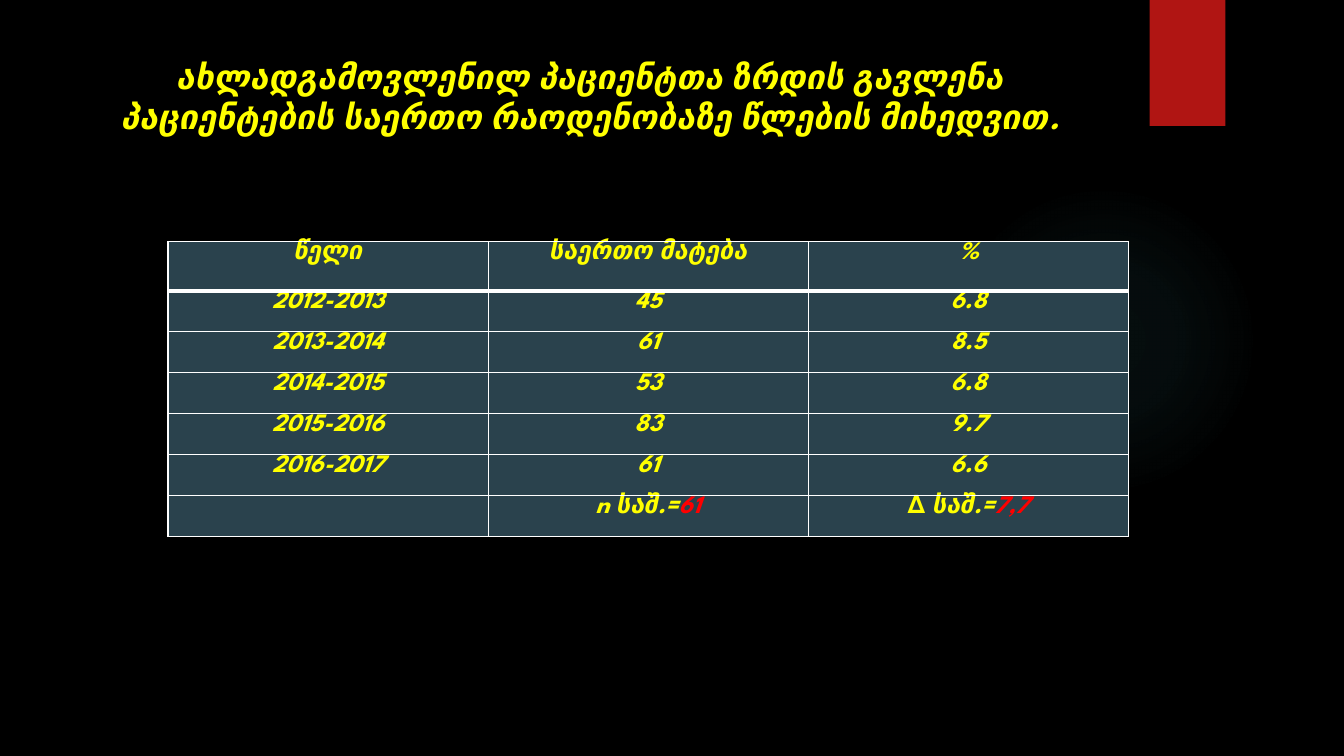
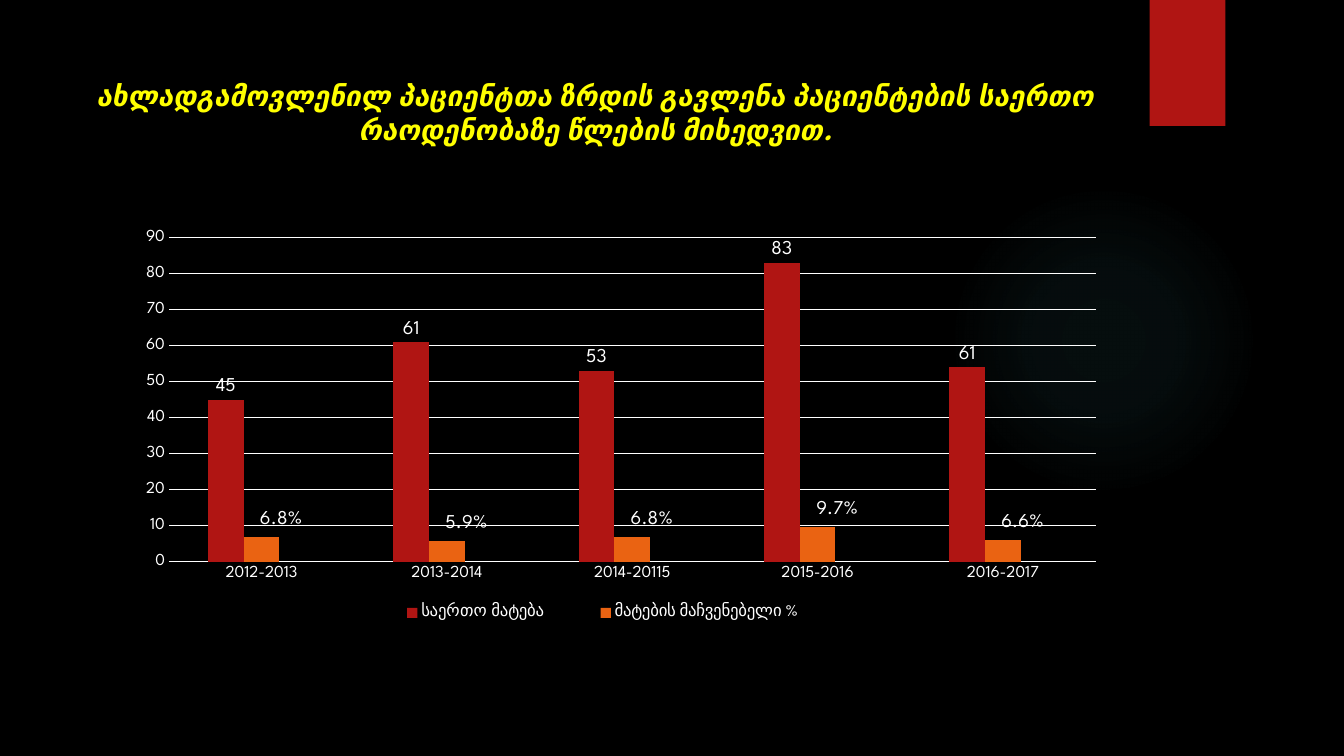
from pptx import Presentation
from pptx.chart.data import CategoryChartData
from pptx.dml.color import RGBColor
from pptx.enum.chart import XL_CHART_TYPE, XL_LABEL_POSITION, XL_LEGEND_POSITION, XL_TICK_MARK
from pptx.enum.shapes import MSO_SHAPE
from pptx.enum.text import MSO_ANCHOR, MSO_AUTO_SIZE, PP_ALIGN
from pptx.oxml import parse_xml
from pptx.oxml.ns import nsdecls, qn
from pptx.util import Emu, Pt

BLACK = RGBColor(0x00, 0x00, 0x00)
WHITE = RGBColor(0xFF, 0xFF, 0xFF)
YELLOW = RGBColor(0xFF, 0xFF, 0x00)
RED = RGBColor(0xFF, 0x00, 0x00)
BRICK = RGBColor(0xB0, 0x15, 0x13)
ORANGE = RGBColor(0xEA, 0x63, 0x12)
GOLD = RGBColor(0xE6, 0xB7, 0x29)
SLATE = RGBColor(0x2A, 0x42, 0x4D)
TEAL = RGBColor(0x50, 0xB9, 0xC1)
FACE = "League Spartan"
SCALE = 9525

HEAD = "ახლადგამოვლენილ პაციენტთა ზრდის გავლენა პაციენტების საერთო რაოდენობაზე წლების მიხედვით."
ROWS = [
    ["წელი", "საერთო მატება", "%"],
    ["2012-2013", "45", "6.8"],
    ["2013-2014", "61", "8.5"],
    ["2014-2015", "53", "6.8"],
    ["2015-2016", "83", "9.7"],
    ["2016-2017", "61", "6.6"],
    ["", "n საშ.=|61", "∆ საშ.=|7,7"],
]
YEARS = ["2012-2013", "2013-2014", "2014-20115", "2015-2016", "2016-2017"]
SERIES = [
    ("საერთო მატება", [45, 61, 53, 83, 54], BRICK, {4: "61"}, None),
    ("მატების მაჩვენებელი %", [6.8, 5.8, 6.8, 9.7, 6], ORANGE,
     dict(enumerate(["6.8%", "5.9%", "6.8%", "9.7%", "6.6%"])), (0.02, -0.01)),
    ("Series 3", [None] * 5, GOLD, {}, None),
]


def px(*sizes):
    """Turn pixel lengths into EMU."""
    return [Emu(size * SCALE) for size in sizes]


def place(x, y, w=None, h=None, inner=False):
    """Build a manual chart layout from fractions."""
    tags = '<c:layoutTarget val="inner"/>' if inner else ""
    if w:
        tags += '<c:xMode val="edge"/><c:yMode val="edge"/>'
    for tag, part in zip("xywh", (x, y, w, h)):
        tags += f'<c:{tag} val="{part}"/>' if part is not None else ""
    return parse_xml(f'<c:layout {nsdecls("c")}><c:manualLayout>{tags}</c:manualLayout></c:layout>')


class Deck:
    """Holds the style and the current slide."""

    def __init__(self):
        """Start a black wide deck."""
        self.file = Presentation()
        self.file.slide_width, self.file.slide_height = px(1280, 720)
        fill = self.file.slide_master.background.fill
        fill.solid()
        fill.fore_color.rgb = BLACK

    def font(self, font, size, color, strong=False):
        """Style one font."""
        font.name, font.size = FACE, Pt(size)
        font.color.rgb = color
        font.bold = font.italic = strong

    def runs(self, para, text, size, tints=(YELLOW, RED)):
        """Add centred runs, split at bars, one tint each."""
        para.alignment = PP_ALIGN.CENTER
        for part, tint in zip(text.split("|"), tints):
            if part:
                run = para.add_run()
                run.text = part
                self.font(run.font, size, tint, True)

    def slide(self, text, size, *box):
        """Add a slide with its glow, ribbon and title."""
        self.page = self.file.slides.add_slide(self.file.slide_layouts[5])
        self.glow(903, 176, 296, 296)
        self.block(MSO_SHAPE.RECTANGLE, BRICK, 1095, 0, 72, 120)
        title = self.page.shapes.title
        title.left, title.top, title.width, title.height = px(*box)
        frame = title.text_frame
        frame.auto_size, frame.word_wrap = MSO_AUTO_SIZE.NONE, True
        frame.vertical_anchor = MSO_ANCHOR.TOP
        self.runs(frame.paragraphs[0], text, size)

    def block(self, kind, color, *box):
        """Add a plain filled shape."""
        shape = self.page.shapes.add_shape(kind, *px(*box))
        shape.shadow.inherit = False
        shape.fill.solid()
        shape.fill.fore_color.rgb = color
        shape.line.fill.background()
        return shape

    def glow(self, *box):
        """Add a circle that fades outwards."""
        props = self.block(MSO_SHAPE.OVAL, TEAL, *box)._element.spPr
        stops = "".join(
            f'<a:gs pos="{pos}000"><a:srgbClr val="{TEAL}"><a:alpha val="{alpha}000"/></a:srgbClr></a:gs>'
            for pos, alpha in ((0, 7), (36, 6), (69, 0)))
        fade = parse_xml(
            f'<a:gradFill {nsdecls("a")}><a:gsLst>{stops}</a:gsLst><a:path path="circle">'
            '<a:fillToRect l="50000" t="50000" r="50000" b="50000"/></a:path></a:gradFill>')
        props.replace(props.find(qn("a:solidFill")), fade)

    def edge(self, cell, top, base):
        """Draw white borders round a cell."""
        props = cell._tc.get_or_add_tcPr()
        for spot, (side, width) in enumerate(zip("LRTB", (1, 1, top, base))):
            props.insert(spot, parse_xml(
                f'<a:ln{side} {nsdecls("a")} w="{Pt(width)}"><a:solidFill>'
                f'<a:srgbClr val="{WHITE}"/></a:solidFill></a:ln{side}>'))

    def table(self, rows, heights, *box):
        """Add a table with a thick rule under its head."""
        grid = self.page.shapes.add_table(len(rows), len(rows[0]), *px(*box)).table
        grid.first_row = grid.horz_banding = False
        for r, (row, height) in enumerate(zip(rows, heights)):
            grid.rows[r].height = px(height)[0]
            for c, text in enumerate(row):
                cell = grid.cell(r, c)
                cell.margin_top = cell.margin_bottom = 0
                cell.fill.solid()
                cell.fill.fore_color.rgb = SLATE
                self.edge(cell, 3 if r == 1 else 1, 3 if r == 0 else 1)
                self.runs(cell.text_frame.paragraphs[0], text, 18)

    def axis(self, axis, line):
        """Style one chart axis and its line."""
        axis.major_tick_mark = axis.minor_tick_mark = XL_TICK_MARK.NONE
        self.font(axis.tick_labels.font, 12, WHITE)
        line.color.rgb = WHITE
        line.width = Pt(0.75)

    def label(self, bars, notes, shift):
        """Label a series, with own texts at some points."""
        labels = bars.data_labels
        labels.show_value = True
        labels.position = XL_LABEL_POSITION.OUTSIDE_END
        self.font(labels.font, 14, WHITE)
        for spot, text in notes.items():
            note = bars.points[spot].data_label
            run = note.text_frame.paragraphs[0].add_run()
            run.text = text
            self.font(run.font, 14, WHITE)
            note.position = XL_LABEL_POSITION.OUTSIDE_END
        if shift:
            for item in bars._element.iter(qn("c:dLbl")):
                item.insert(1, place(*shift))

    def chart(self, names, series, *box):
        """Add a column chart with a legend below."""
        data = CategoryChartData()
        data.categories = names
        for name, values, *_ in series:
            data.add_series(name, values)
        chart = self.page.shapes.add_chart(XL_CHART_TYPE.COLUMN_CLUSTERED, *px(*box), data).chart
        chart.has_title = False
        self.font(chart.font, 10, WHITE)
        plot = chart.plots[0]
        plot.gap_width, plot.vary_by_categories = 219, False
        for bars, (_, _, color, notes, shift) in zip(plot.series, series):
            bars.format.fill.solid()
            bars.format.fill.fore_color.rgb = color
            self.label(bars, notes, shift)
        scale = chart.value_axis
        scale.minimum_scale, scale.maximum_scale, scale.major_unit = 0, 90, 10
        self.axis(chart.category_axis, chart.category_axis.format.line)
        self.axis(scale, scale.major_gridlines.format.line)
        scale.format.line.fill.background()
        area = chart._chartSpace.chart.plotArea
        for old in area.findall(qn("c:layout")):
            area.remove(old)
        area.insert(0, place(0.05, 0.11, 0.94, 0.7, inner=True))
        self.legend(chart)

    def legend(self, chart):
        """Place the legend and drop the empty series from it."""
        chart.has_legend = True
        legend = chart.legend
        legend.position = XL_LEGEND_POSITION.BOTTOM
        legend.include_in_layout = False
        self.font(legend.font, 12, WHITE)
        root = legend._element
        for old in root.findall(qn("c:layout")):
            root.remove(old)
        root.insert(1, parse_xml(
            f'<c:legendEntry {nsdecls("c")}><c:idx val="2"/><c:delete val="1"/></c:legendEntry>'))
        root.insert(2, place(0.24, 0.88, 0.5, 0.08))


def main():
    """Build and save the deck."""
    deck = Deck()
    deck.slide(HEAD, 24, 68, 48, 988, 147)
    deck.table(ROWS, [47] + [39] * 6, 160, 230, 915, 281)
    deck.slide(HEAD, 20, 73, 70, 988, 96)
    deck.chart(YEARS, SERIES, 114, 178, 939, 441)
    deck.file.save("out.pptx")


if __name__ == "__main__":
    main()
